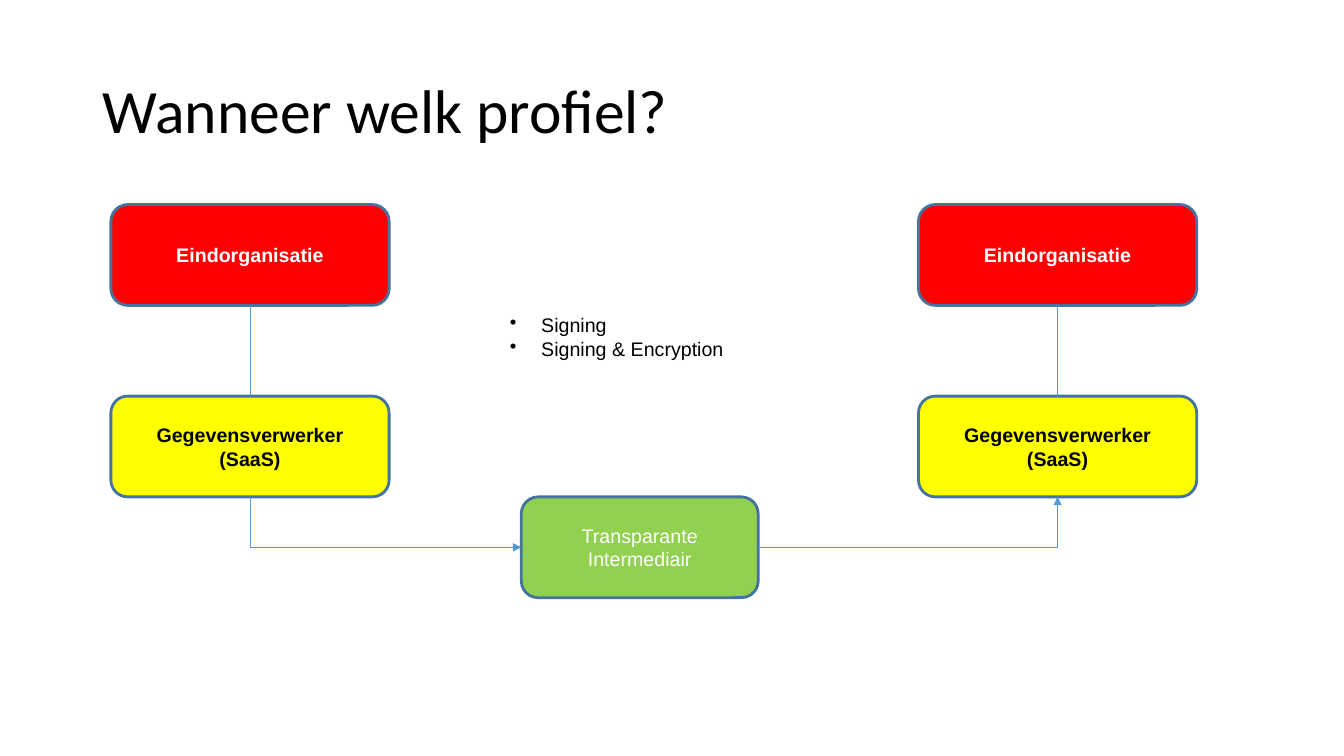
import pptx
import pptx.util
import pptx.dml.color
import pptx.enum.shapes
import pptx.enum.text
import pptx.oxml
import pptx.oxml.ns
import lxml.etree

TITLE = "Wanneer welk profiel?"
PROFILES = ["Signing", "Signing & Encryption"]
COLORS = {"red": "FF0000", "yellow": "FFFF00", "green": "92D050", "outline": "43739E",
          "link": "5698D3", "white": "FFFFFF", "black": "000000"}
COLUMNS = {"sender": (1.1, 2.76), "middle": (5.17, 2.35), "receiver": (9.11, 2.76)}
ROWS = {"organisation": 2.03, "processor": 3.93, "intermediary": 4.93}
BOX_HEIGHT = 1
ORGANISATION = ("organisation", "Eindorganisatie", "red", "white", True)
PROCESSOR = ("processor", "Gegevensverwerker (SaaS)", "yellow", "black", True)
INTERMEDIARY = ("intermediary", "Transparante Intermediair", "green", "white", False)
CHAINS = {"sender": [ORGANISATION, PROCESSOR], "receiver": [ORGANISATION, PROCESSOR],
          "middle": [INTERMEDIARY]}

Inches = pptx.util.Inches
Pt = pptx.util.Pt
qn = pptx.oxml.ns.qn
Connector = pptx.enum.shapes.MSO_CONNECTOR


def color(name):
    return pptx.dml.color.RGBColor.from_string(COLORS[name])


def set_font(para, name, size, tint, bold=False):
    para.font.name = name
    para.font.size = Pt(size)
    para.font.bold = bold
    para.font.color.rgb = color(tint)


def add_box(page, column, row, text, fill, tint, bold):
    left, width = COLUMNS[column]
    box = page.shapes.add_shape(pptx.enum.shapes.MSO_SHAPE.ROUNDED_RECTANGLE, Inches(left),
                                Inches(ROWS[row]), Inches(width), Inches(BOX_HEIGHT))
    box.shadow.inherit = False
    box.fill.solid()
    box.fill.fore_color.rgb = color(fill)
    box.line.color.rgb = color("outline")
    box.line.width = Pt(2)
    frame = box.text_frame
    frame.word_wrap = True
    frame.vertical_anchor = pptx.enum.text.MSO_ANCHOR.MIDDLE
    para = frame.paragraphs[0]
    para.text = text
    para.alignment = pptx.enum.text.PP_ALIGN.CENTER
    set_font(para, "Arial", 14, tint, bold)
    return box


def add_link(page, kind, start, end):
    link = page.shapes.add_connector(kind, *map(int, start + end))
    link.line.color.rgb = color("link")
    link.line.width = Pt(0.75)
    lxml.etree.SubElement(link._element.spPr, qn("a:effectLst"))
    return link


def add_bent_arrow(page, start, end, down_first):
    if down_first:
        middle_x, middle_y = (start[0] + end[0]) / 2, (start[1] + end[1]) / 2
        half_x, half_y = (end[0] - start[0]) / 2, (end[1] - start[1]) / 2
        start = (middle_x + half_y, middle_y - half_x)
        end = (middle_x - half_y, middle_y + half_x)
    arrow = add_link(page, Connector.ELBOW, start, end)
    arrow._element.spPr.find(qn("a:prstGeom")).set("prst", "bentConnector2")
    if down_first:
        arrow.rotation = 270 if hasattr(arrow, "rotation") else 0
        arrow._element.spPr.find(qn("a:xfrm")).set("rot", str(270 * 60000))
    head = lxml.etree.SubElement(arrow.line._get_or_add_ln(), qn("a:tailEnd"))
    head.set("type", "triangle")


def add_title(page):
    box = page.shapes.add_textbox(Inches(0.92), Inches(0.4), Inches(11.5), Inches(1.45))
    box.text_frame.word_wrap = True
    box.text_frame.vertical_anchor = pptx.enum.text.MSO_ANCHOR.MIDDLE
    para = box.text_frame.paragraphs[0]
    para.text = TITLE
    para.line_spacing = 0.9
    set_font(para, "Calibri", 44, "black")


def add_profiles(page):
    box = page.shapes.add_textbox(Inches(4.96), Inches(3.06), Inches(2.34), Inches(0.57))
    frame = box.text_frame
    frame.word_wrap = False
    frame.auto_size = pptx.enum.text.MSO_AUTO_SIZE.SHAPE_TO_FIT_TEXT
    frame.text = "\n".join(PROFILES)
    for para in frame.paragraphs:
        set_font(para, "Arial", 14, "black")
        properties = para._p.get_or_add_pPr()
        properties.set("marL", str(Inches(0.31)))
        properties.set("indent", str(-Inches(0.31)))
        bullet = pptx.oxml.parse_xml(
            '<a:buChar xmlns:a="http://schemas.openxmlformats.org/drawingml/2006/main" char="•"/>')
        properties.insert(0, bullet)


def main():
    deck = pptx.Presentation()
    deck.slide_width = Inches(13.33)
    deck.slide_height = Inches(7.5)
    page = deck.slides.add_slide(deck.slide_layouts[6])
    add_title(page)
    boxes = {(column, entry[0]): add_box(page, column, *entry)
             for column, entries in CHAINS.items() for entry in entries}

    def bottom(box):
        return box.left + box.width // 2, box.top + box.height

    for column in ("sender", "receiver"):
        upper, lower = boxes[column, "organisation"], boxes[column, "processor"]
        link = add_link(page, Connector.STRAIGHT, bottom(upper),
                        (lower.left + lower.width // 2, lower.top))
        link.begin_connect(upper, 2)
        link.end_connect(lower, 0)
    add_profiles(page)

    hub = boxes["middle", "intermediary"]
    hub_y = hub.top + hub.height // 2
    add_bent_arrow(page, bottom(boxes["sender", "processor"]), (hub.left, hub_y), True)
    add_bent_arrow(page, (hub.left + hub.width, hub_y),
                   bottom(boxes["receiver", "processor"]), False)
    deck.save("out.pptx")


if __name__ == "__main__":
    main()
